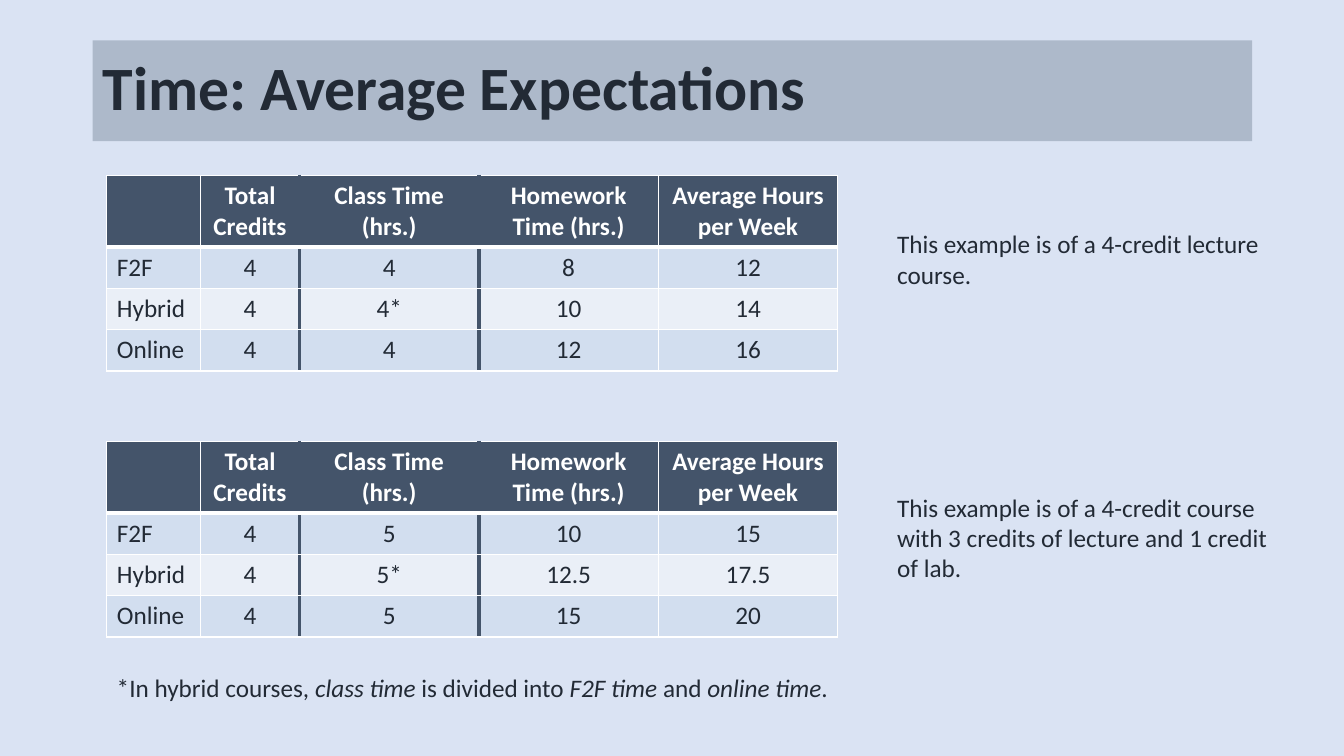
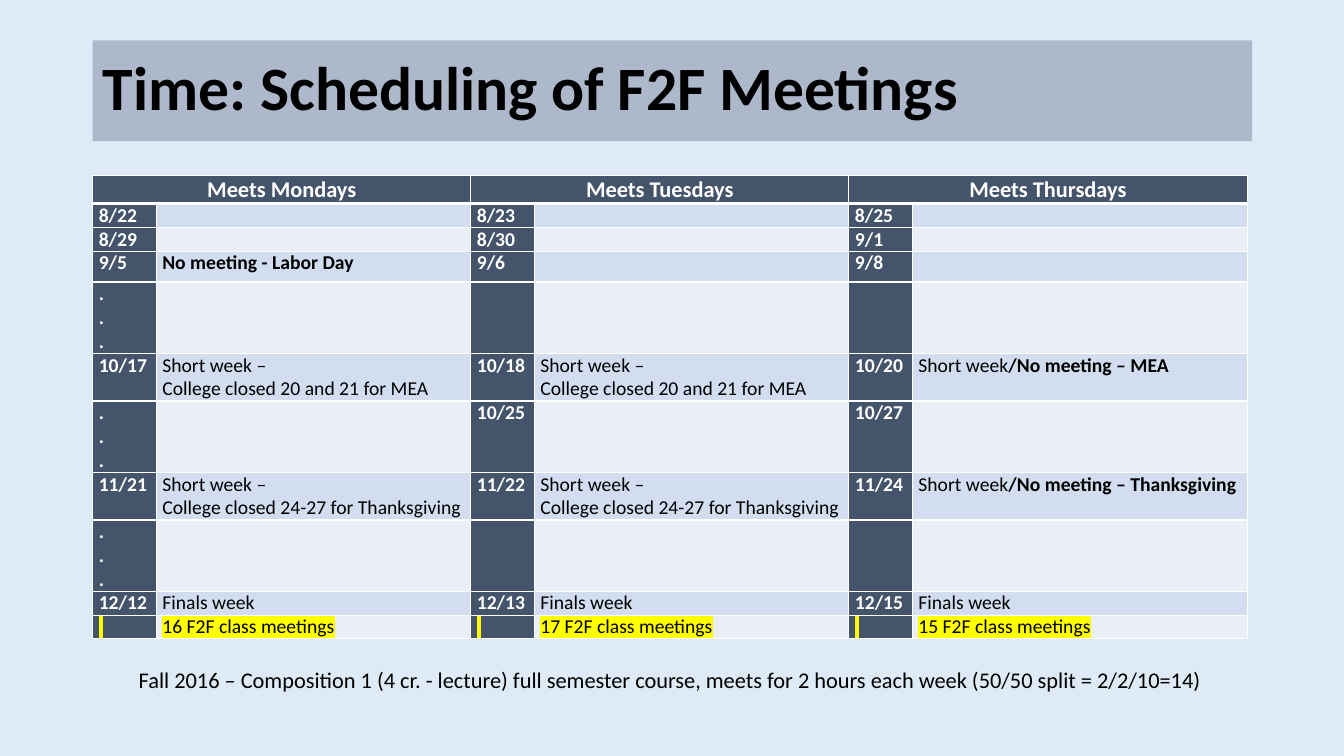
from dataclasses import dataclass

from lxml import etree
from pptx import Presentation
from pptx.dml.color import RGBColor
from pptx.enum.shapes import MSO_SHAPE
from pptx.enum.text import MSO_ANCHOR, PP_ALIGN
from pptx.oxml.ns import qn
from pptx.util import Inches, Pt

RECTANGLE = MSO_SHAPE.RECTANGLE
TOP, MIDDLE = MSO_ANCHOR.TOP, MSO_ANCHOR.MIDDLE
LEFT, CENTER = PP_ALIGN.LEFT, PP_ALIGN.CENTER


@dataclass(frozen=True)
class Theme:
    font: str = "Calibri"
    band: str = "ADB9CA"
    navy: str = "44546A"
    ink: str = "222A35"
    black: str = "000000"
    white: str = "FFFFFF"
    yellow: str = "FFFF00"
    stripes: tuple = ("D2DEEF", "EAEFF7")
    hours_background: str = "DAE3F3"
    schedule_background: str = "DEEBF7"
    title_size: int = 44
    body_size: int = 18
    heading_size: int = 16
    schedule_size: int = 14
    thin: int = 1
    thick: int = 3


THEME = Theme()

# Text is a string, or a list of paragraphs; a paragraph is a string or a list
# of (text, mark) runs, where the mark is "", "bold", "italic" or "highlight".
HOURS_HEADINGS = ["", "Total Credits", "Class Time (hrs.)",
                  "Homework Time (hrs.)", "Average Hours per Week"]
HOURS_TABLES = [
    {"top": 1.74, "note_top": 2.22, "note_height": 0.71,
     "note": "This example is of a 4-credit lecture course.",
     "rows": [["F2F", "4", "4", "8", "12"],
              ["Hybrid", "4", "4*", "10", "14"],
              ["Online", "4", "4", "12", "16"]]},
    {"top": 4.38, "note_top": 4.83, "note_height": 1.01,
     "note": "This example is of a 4-credit course with 3 credits of lecture "
             "and 1 credit of lab.",
     "rows": [["F2F", "4", "5", "10", "15"],
              ["Hybrid", "4", "5*", "12.5", "17.5"],
              ["Online", "4", "5", "15", "20"]]},
]
HYBRID_NOTE = [[("*In hybrid courses, ", ""), ("class time ", "italic"),
                ("is divided into ", ""), ("F2F time ", "italic"),
                ("and ", ""), ("online time", "italic"), (".", "")]]

DAYS = ["Meets Mondays", "Meets Tuesdays", "Meets Thursdays"]
DOTS = [".", ".", "."]
LABOR_DAY = [[("No meeting - Labor Day", "bold")]]
MEA_WEEK = ["Short week –", "College closed 20 and 21 for MEA"]
MEA_DAY = [[("Short week", ""), ("/No meeting – MEA", "bold")]]
THANKSGIVING_WEEK = ["Short week –", "College closed 24-27 for Thanksgiving"]
THANKSGIVING_DAY = [[("Short week", ""), ("/No meeting – Thanksgiving", "bold")]]
FINALS = "Finals week"
MARKER = [[(" ", "highlight")]]
MEETING_COUNTS = [[[(f"{count} F2F class meetings", "highlight")]]
                  for count in (16, 17, 15)]
# Each row: date and note for Monday, Tuesday and Thursday.
SCHEDULE = [
    ["8/22", "", "8/23", "", "8/25", ""],
    ["8/29", "", "8/30", "", "9/1", ""],
    ["9/5", LABOR_DAY, "9/6", "", "9/8", ""],
    [DOTS, "", "", "", "", ""],
    ["10/17", MEA_WEEK, "10/18", MEA_WEEK, "10/20", MEA_DAY],
    [DOTS, "", "10/25", "", "10/27", ""],
    ["11/21", THANKSGIVING_WEEK, "11/22", THANKSGIVING_WEEK,
     "11/24", THANKSGIVING_DAY],
    [DOTS, "", "", "", "", ""],
    ["12/12", FINALS, "12/13", FINALS, "12/15", FINALS],
    [part for count in MEETING_COUNTS for part in (MARKER, count)],
]
SCHEDULE_NOTE = ("Fall 2016 – Composition 1 (4 cr. - lecture) full semester course, "
                 "meets for 2 hours each week (50/50 split = 2/2/10=14)")


def rgb(color):
    return RGBColor.from_string(color)


def add_highlight(run, color):
    highlight = etree.Element(qn("a:highlight"))
    etree.SubElement(highlight, qn("a:srgbClr"), val=color)
    run.font._element.find(qn("a:solidFill")).addnext(highlight)


def write_text(frame, text, size, color, bold=False, align=LEFT, line_spacing=None):
    paragraphs = [text] if isinstance(text, str) else text
    for index, content in enumerate(paragraphs):
        paragraph = frame.add_paragraph() if index else frame.paragraphs[0]
        paragraph.alignment = align
        if line_spacing:
            paragraph.line_spacing = line_spacing
        if not content:
            # An empty paragraph takes its height from its end mark.
            etree.SubElement(paragraph._p, qn("a:endParaRPr"), sz=str(size * 100))
            continue
        runs = [(content, "")] if isinstance(content, str) else content
        for words, mark in runs:
            run = paragraph.add_run()
            run.text = words
            run.font.name = THEME.font
            run.font.size = Pt(size)
            run.font.bold = bold or mark == "bold"
            run.font.italic = mark == "italic"
            run.font.color.rgb = rgb(color)
            if mark == "highlight":
                add_highlight(run, THEME.yellow)


def add_slide(presentation, background, title, title_color):
    slide = presentation.slides.add_slide(presentation.slide_layouts[6])
    slide.background.fill.solid()
    slide.background.fill.fore_color.rgb = rgb(background)
    band = slide.shapes.add_shape(RECTANGLE, Inches(0.92), Inches(0.4),
                                  Inches(11.5), Inches(1))
    band.shadow.inherit = False
    band.fill.solid()
    band.fill.fore_color.rgb = rgb(THEME.band)
    band.line.fill.background()
    band.text_frame.word_wrap = True
    band.text_frame.vertical_anchor = MIDDLE
    write_text(band.text_frame, title, THEME.title_size, title_color,
               bold=True, line_spacing=0.9)
    return slide


def add_note(slide, text, left, top, width, height, size, color, align=LEFT):
    box = slide.shapes.add_textbox(Inches(left), Inches(top),
                                   Inches(width), Inches(height))
    box.text_frame.word_wrap = True
    write_text(box.text_frame, text, size, color, align=align)


def add_grid(slide, left, top, widths, heights):
    """Add a plain table; widths and heights are lengths."""
    table = slide.shapes.add_table(len(heights), len(widths), Inches(left),
                                   Inches(top), sum(widths), sum(heights)).table
    table.first_row = table.horz_banding = False
    for column, width in zip(table.columns, widths):
        column.width = width
    for row, height in zip(table.rows, heights):
        row.height = height
    return table


def style_cell(cell, fill, row, dark_sides=""):
    """Fill a cell and rule its sides; the line under row 0 is thick."""
    cell.fill.solid()
    cell.fill.fore_color.rgb = rgb(fill)
    properties = cell._tc.get_or_add_tcPr()
    for index, side in enumerate("LRTB"):
        dark = side in dark_sides
        under_header = (side, row) in (("B", 0), ("T", 1))
        width = THEME.thick if dark or under_header else THEME.thin
        line = etree.Element(qn(f"a:ln{side}"), w=str(int(Pt(width))))
        solid = etree.SubElement(line, qn("a:solidFill"))
        etree.SubElement(solid, qn("a:srgbClr"),
                         val=THEME.navy if dark else THEME.white)
        properties.insert(index, line)


def stripe(row):
    return THEME.stripes[(row - 1) % 2]


def add_hours_table(slide, top, rows):
    widths = [Inches(width) for width in (0.93, 0.98, 1.78, 1.78, 1.78)]
    heights = [Inches(0.71)] + [Inches(0.41)] * len(rows)
    table = add_grid(slide, 1.06, top, widths, heights)
    dark_sides = {1: "R", 2: "LR", 3: "L"}
    for row, texts in enumerate([HOURS_HEADINGS] + rows):
        header = row == 0
        for column, text in enumerate(texts):
            cell = table.cell(row, column)
            style_cell(cell, THEME.navy if header else stripe(row), row,
                       dark_sides.get(column, ""))
            write_text(cell.text_frame, text, THEME.body_size,
                       THEME.white if header else THEME.ink, bold=header,
                       align=CENTER if header or column else LEFT)


def schedule_height(texts):
    lines = max(1 if isinstance(text, str) else len(text) for text in texts)
    spare = Inches(0.07) if LABOR_DAY in texts else 0
    return lines * Pt(17) + spare


def add_schedule(slide):
    widths = [Inches(width) for width in (0.63, 3.12, 0.63, 3.12, 0.63, 3.32)]
    heights = [Inches(0.28)] + [schedule_height(texts) for texts in SCHEDULE]
    table = add_grid(slide, 0.92, 1.74, widths, heights)
    headings = [part for day in DAYS for part in (day, "")]
    for row, texts in enumerate([headings] + SCHEDULE):
        header = row == 0
        for column, text in enumerate(texts):
            cell = table.cell(row, column)
            dark = header or column % 2 == 0
            style_cell(cell, THEME.navy if dark else stripe(row), row)
            cell.margin_left = cell.margin_right = Inches(0.06)
            cell.margin_top = cell.margin_bottom = 0
            cell.vertical_anchor = MIDDLE if header else TOP
            write_text(cell.text_frame, text,
                       THEME.heading_size if header else THEME.schedule_size,
                       THEME.white if dark else THEME.black, bold=dark,
                       align=CENTER if header else LEFT)
    for column in range(0, len(widths), 2):
        table.cell(0, column).merge(table.cell(0, column + 1))


def build_hours_slide(presentation):
    slide = add_slide(presentation, THEME.hours_background,
                      "Time: Average Expectations", THEME.ink)
    for example in HOURS_TABLES:
        add_hours_table(slide, example["top"], example["rows"])
        add_note(slide, example["note"], 8.8, example["note_top"], 3.97,
                 example["note_height"], THEME.body_size, THEME.ink)
    add_note(slide, HYBRID_NOTE, 1.06, 6.62, 11.7, 0.4, THEME.body_size, THEME.ink)


def build_schedule_slide(presentation):
    slide = add_slide(presentation, THEME.schedule_background,
                      "Time: Scheduling of F2F Meetings", THEME.black)
    add_schedule(slide)
    add_note(slide, SCHEDULE_NOTE, 0.92, 6.56, 11.45, 0.37,
             THEME.heading_size, THEME.black, CENTER)


def main():
    presentation = Presentation()
    presentation.slide_width = Inches(13.33)
    presentation.slide_height = Inches(7.5)
    build_hours_slide(presentation)
    build_schedule_slide(presentation)
    presentation.save("out.pptx")


if __name__ == "__main__":
    main()
